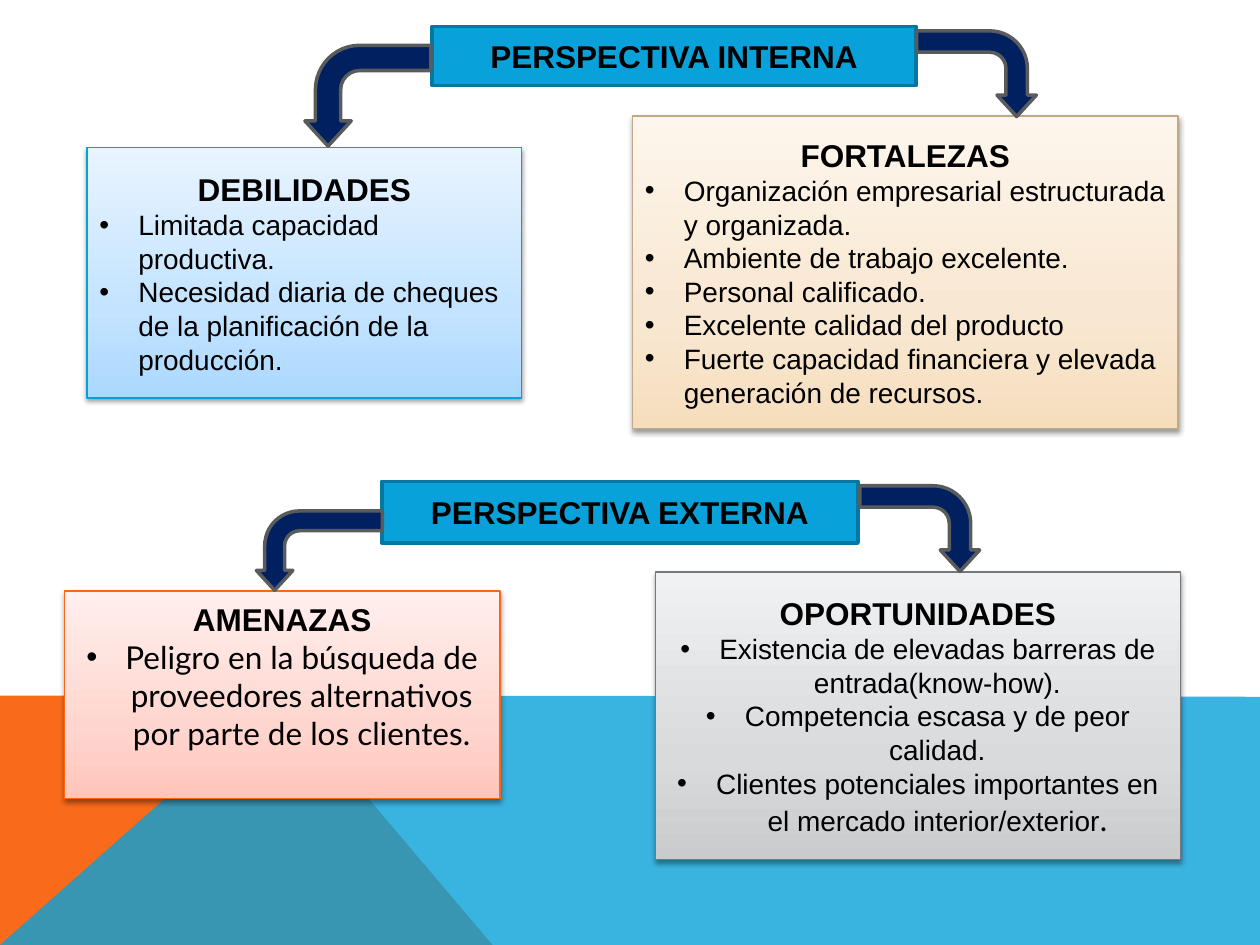
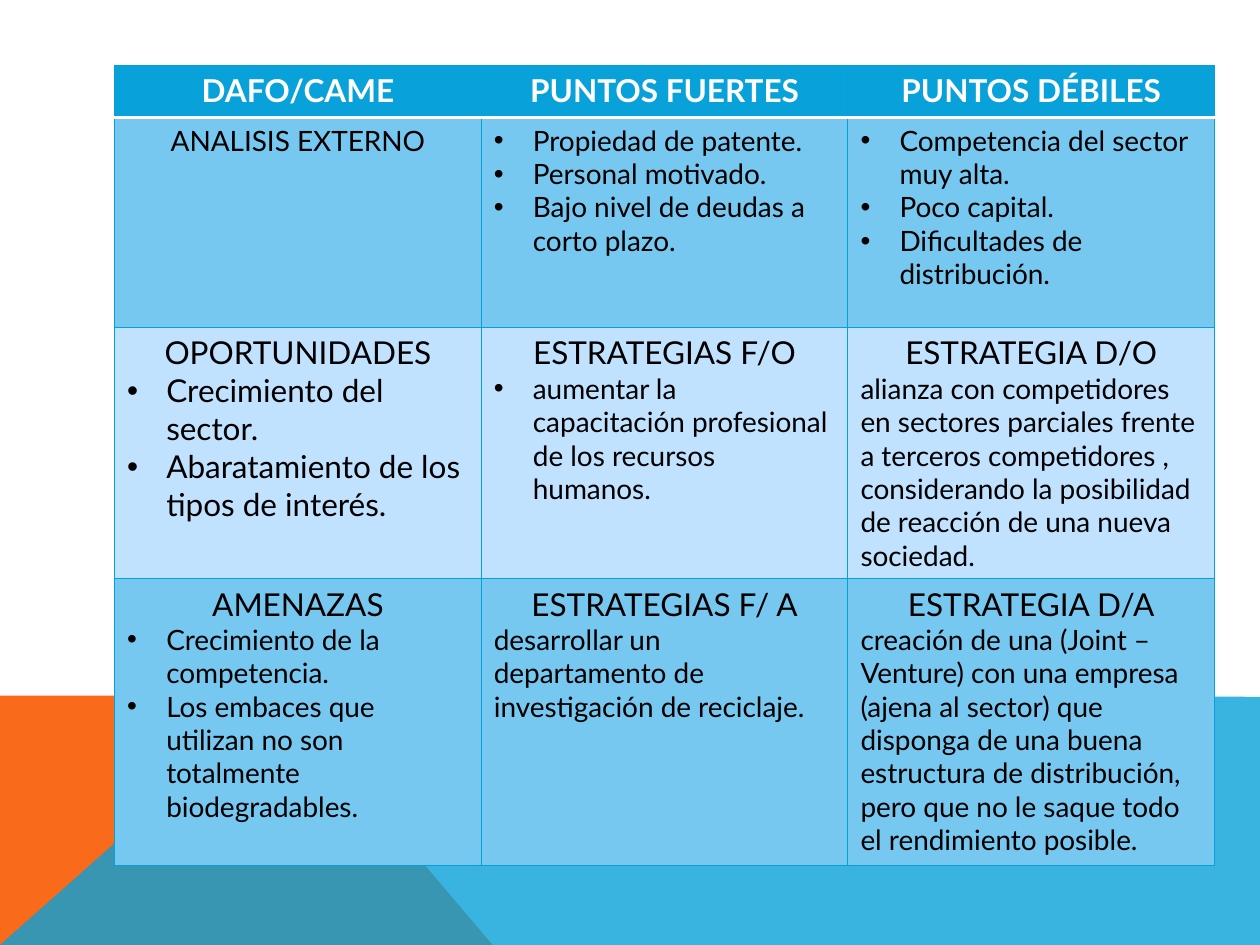
from dataclasses import dataclass

from lxml import etree
from pptx import Presentation
from pptx.dml.color import RGBColor
from pptx.enum.shapes import MSO_SHAPE
from pptx.enum.text import MSO_ANCHOR, PP_ALIGN
from pptx.oxml.ns import qn
from pptx.util import Inches, Pt

RECTANGLE = MSO_SHAPE.RECTANGLE
BENT_ARROW = MSO_SHAPE.BENT_ARROW
CENTER, LEFT = PP_ALIGN.CENTER, PP_ALIGN.LEFT
MIDDLE = MSO_ANCHOR.MIDDLE


@dataclass(frozen=True)
class Theme:
    blue: str = "08A1D9"
    blue_edge: str = "0677A1"
    grid: str = "03A0D9"
    orange: str = "F96A1B"
    navy: str = "002060"
    arrow_edge: str = "5A5B5D"
    dark_row: str = "76C8F0"
    light_row: str = "C1E2FF"
    black: str = "000000"
    white: str = "FFFFFF"
    sans: str = "Arial"
    table_font: str = "Lato"
    heading: int = 18
    body: int = 16
    thin: float = 0.75
    thick: float = 2
    # Box colours: gradient from bottom to top, then outline
    threats: tuple = ("FFC5BA", "FFD6CF", "FFEFED", "F96615")
    weaknesses: tuple = ("ABD8FF", "C3E3FF", "E8F4FF", "03A0D9")
    strengths: tuple = ("F6DEBD", "F8E7D1", "FDF6EC", "BFA989")
    opportunities: tuple = ("C9CBCD", "D9DADC", "F0F1F2", "76787B")


THEME = Theme()


@dataclass
class Line:
    text: str
    size: int = THEME.body
    font: str = THEME.sans
    color: str = THEME.black
    bold: bool = False
    align: int = LEFT
    bullet: bool = False
    ending: str = ""  # closing text in the table font at heading size


def child(parent, tag, **attributes):
    element = etree.SubElement(parent, qn(tag))
    for name, value in attributes.items():
        element.set(name, str(value))
    return element


def add_color(parent, color, alpha=None):
    element = child(parent, "a:srgbClr", val=color)
    if alpha is not None:
        child(element, "a:alpha", val=alpha * 1000)


class Deck:
    """Holds the theme and the current slide, and draws each kind of element."""

    def __init__(self, theme):
        self.theme = theme
        self.presentation = Presentation()
        self.presentation.slide_width = Inches(10)
        self.presentation.slide_height = Inches(7.5)
        self.slide = None

    def new_slide(self):
        layout = self.presentation.slide_layouts[6]
        self.slide = self.presentation.slides.add_slide(layout)

    def paint(self, shape, fill, line=None, width=0):
        shape.shadow.inherit = False
        shape.fill.solid()
        shape.fill.fore_color.rgb = RGBColor.from_string(fill)
        if line is None:
            shape.line.fill.background()
        else:
            shape.line.color.rgb = RGBColor.from_string(line)
            shape.line.width = Pt(width)

    def master_band(self, points, color, alpha=100):
        """Build an outline and move it to the slide master."""
        corners = [(Inches(x), Inches(y)) for x, y in points]
        builder = self.slide.shapes.build_freeform(*corners[0])
        builder.add_line_segments(corners[1:], close=True)
        shape = builder.convert_to_shape()
        self.paint(shape, color)
        rgb = shape.element.spPr.find(qn("a:solidFill"))[0]
        child(rgb, "a:alpha", val=alpha * 1000)
        tree = self.presentation.slide_master.element.cSld.spTree
        shape.element.nvSpPr.cNvPr.set("id", str(100 + len(tree)))
        tree.append(shape.element)

    def fill_text(self, text_frame, lines):
        text_frame.word_wrap = True
        for index, line in enumerate(lines):
            paragraph = text_frame.paragraphs[0] if index == 0 else text_frame.add_paragraph()
            paragraph.text = line.text
            paragraph.alignment = line.align
            if line.ending:
                paragraph.add_run().text = line.ending
            for position, run in enumerate(paragraph.runs):
                is_ending = position > 0
                run.font.name = self.theme.table_font if is_ending else line.font
                run.font.size = Pt(self.theme.heading if is_ending else line.size)
                run.font.bold = line.bold
                run.font.color.rgb = RGBColor.from_string(line.color)
            if line.bullet:
                properties = paragraph._p.get_or_add_pPr()
                properties.set("marL", str(Inches(0.31)))
                properties.set("indent", str(-Inches(0.31)))
                child(properties, "a:buFont", typeface="Arial")
                child(properties, "a:buChar", char="•")

    def rectangle(self, left, top, width, height, lines, fill, line, line_width):
        shape = self.slide.shapes.add_shape(
            RECTANGLE, Inches(left), Inches(top), Inches(width), Inches(height))
        self.paint(shape, fill, line, line_width)
        shape.text_frame.vertical_anchor = MIDDLE
        self.fill_text(shape.text_frame, lines)
        return shape

    def banner(self, left, top, width, height, text):
        self.rectangle(left, top, width, height, [heading(text)],
                       self.theme.blue, self.theme.blue_edge, self.theme.thick)

    def box(self, left, top, width, height, colors, lines):
        *stops, edge = colors
        shape = self.rectangle(left, top, width, height, lines, stops[0], edge, self.theme.thin)
        properties = shape.element.spPr
        # Three-stop gradient running upwards
        gradient = etree.Element(qn("a:gradFill"), rotWithShape="1")
        stop_list = child(gradient, "a:gsLst")
        for position, color in zip((0, 35, 100), stops):
            add_color(child(stop_list, "a:gs", pos=position * 1000), color)
        child(gradient, "a:lin", ang=270 * 60000, scaled=0)
        properties.replace(properties.find(qn("a:solidFill")), gradient)
        # Soft shadow below
        shadow = child(properties.find(qn("a:effectLst")), "a:outerShdw", blurRad=Pt(3.1),
                       dist=Pt(1.6), dir=90 * 60000, rotWithShape=0)
        add_color(shadow, self.theme.black, 38)
        return shape

    def bent_arrow(self, left, top, width, height, to_left=False):
        shape = self.slide.shapes.add_shape(
            BENT_ARROW, Inches(left), Inches(top), Inches(width), Inches(height))
        for index, value in enumerate((0.25, 0.23, 0.25, 0.44)):
            shape.adjustments[index] = value
        shape.rotation = 90
        if to_left:
            shape.element.spPr.get_or_add_xfrm().set("flipV", "1")
        self.paint(shape, self.theme.navy, self.theme.arrow_edge, self.theme.thick)

    def border(self, cell, side, color, width):
        line = child(cell._tc.get_or_add_tcPr(), f"a:ln{side}", w=Pt(width))
        add_color(child(line, "a:solidFill"), color)

    def table(self, left, top, column_width, row_heights, rows):
        theme = self.theme
        columns = len(rows[0])
        table = self.slide.shapes.add_table(
            len(rows), columns, Inches(left), Inches(top),
            Inches(column_width * columns), Inches(sum(row_heights))).table
        for column in table.columns:
            column.width = Inches(column_width)
        for row_index, (height, contents) in enumerate(zip(row_heights, rows)):
            table.rows[row_index].height = Inches(height)
            fill = theme.blue if row_index == 0 else (
                theme.dark_row if row_index % 2 else theme.light_row)
            for column_index, lines in enumerate(contents):
                cell = table.cell(row_index, column_index)
                for side in "LRTB":
                    below_header = (row_index, side) in ((0, "B"), (1, "T"))
                    self.border(cell, side, theme.white if below_header else theme.grid,
                                theme.thick if below_header else theme.thin)
                cell.fill.solid()
                cell.fill.fore_color.rgb = RGBColor.from_string(fill)
                self.fill_text(cell.text_frame, lines)


def heading(text):
    return Line(text, THEME.heading, bold=True, align=CENTER)


def bullets(*texts, **style):
    return [Line(text, bullet=True, **style) for text in texts]


def cell_text(text, **style):
    return Line(text, font=THEME.table_font, **style)


def cell_title(text, size=THEME.heading, **style):
    return cell_text(text, size=size, align=CENTER, **style)


def cell_bullets(*texts, **style):
    return bullets(*texts, font=THEME.table_font, **style)


def build_perspectives(deck):
    # Internal and external boxes
    threats = deck.box(0.51, 4.69, 3.46, 1.65, THEME.threats, [
        heading("AMENAZAS"),
        *cell_bullets("Peligro en la búsqueda de proveedores alternativos por parte de los clientes.",
                      size=THEME.heading, align=CENTER)])
    threats.text_frame.margin_bottom = Inches(0.35)
    deck.box(0.69, 1.17, 3.45, 1.99, THEME.weaknesses, [
        heading("DEBILIDADES"),
        *bullets("Limitada capacidad productiva.",
                 "Necesidad diaria de cheques de la planificación de la producción.")])
    deck.box(5.02, 0.92, 4.33, 2.48, THEME.strengths, [
        heading("FORTALEZAS"),
        *bullets("Organización empresarial estructurada y organizada.",
                 "Ambiente de trabajo excelente.",
                 "Personal calificado.",
                 "Excelente calidad del producto",
                 "Fuerte capacidad financiera y elevada generación de recursos.")])
    deck.box(5.2, 4.54, 4.17, 2.28, THEME.opportunities, [
        heading("OPORTUNIDADES"),
        *bullets("Existencia de elevadas barreras de entrada(know-how).",
                 "Competencia escasa y de peor calidad.", align=CENTER),
        *bullets("Clientes potenciales importantes en el mercado interior/exterior",
                 align=CENTER, ending=".")])

    # Banners and the arrows that leave them
    deck.banner(3.43, 0.21, 3.84, 0.47, "PERSPECTIVA INTERNA")
    deck.banner(3.03, 3.82, 3.78, 0.49, "PERSPECTIVA EXTERNA")
    deck.bent_arrow(6.96, 3.72, 0.68, 0.95)
    deck.bent_arrow(2.22, 3.87, 0.63, 1, to_left=True)
    deck.bent_arrow(7.41, 0.11, 0.68, 0.95)
    deck.bent_arrow(2.52, 0.26, 0.8, 1, to_left=True)


def build_strategies(deck):
    header = [[cell_title(text, color=THEME.white, bold=True)]
              for text in ("DAFO/CAME", "PUNTOS FUERTES", "PUNTOS DÉBILES")]
    external_analysis = [
        [cell_title("ANALISIS EXTERNO", size=THEME.body)],
        cell_bullets("Propiedad de patente.", "Personal motivado.",
                     "Bajo nivel de deudas a corto plazo."),
        cell_bullets("Competencia del sector muy alta.", "Poco capital.",
                     "Dificultades de distribución.")]
    opportunities = [
        [cell_title("OPORTUNIDADES"),
         *cell_bullets("Crecimiento del sector.", "Abaratamiento de los tipos de interés.",
                       size=THEME.heading)],
        [cell_title("ESTRATEGIAS F/O"),
         *cell_bullets("aumentar la capacitación profesional de los recursos humanos.")],
        [cell_title("ESTRATEGIA D/O"),
         cell_text("alianza con competidores en sectores parciales frente a terceros "
                   "competidores , considerando la posibilidad de reacción de una nueva sociedad.")]]
    threats = [
        [cell_title("AMENAZAS"),
         *cell_bullets("Crecimiento de la competencia.",
                       "Los embaces que utilizan no son totalmente biodegradables.")],
        [cell_title("ESTRATEGIAS F/ A"),
         cell_text("desarrollar un departamento de investigación de reciclaje.")],
        [cell_title("ESTRATEGIA D/A"),
         cell_text("creación de una (Joint –Venture) con una empresa (ajena al sector) que "
                   "disponga de una buena estructura de distribución, pero que no le saque "
                   "todo el rendimiento posible.")]]
    deck.table(0.91, 0.52, 2.91, (0.41, 1.67, 1.99, 2.28),
               [header, external_analysis, opportunities, threats])


def main():
    deck = Deck(THEME)
    deck.new_slide()
    # Bands shared through the master
    deck.master_band([(0, 7.5), (0, 5.52), (2.23, 5.52), (3.91, 7.5)], THEME.orange)
    deck.master_band([(0, 7.5), (2.23, 5.52), (10, 5.53), (10, 7.5)], THEME.blue, alpha=80)
    build_perspectives(deck)
    deck.new_slide()
    build_strategies(deck)
    deck.presentation.save("out.pptx")


if __name__ == "__main__":
    main()
